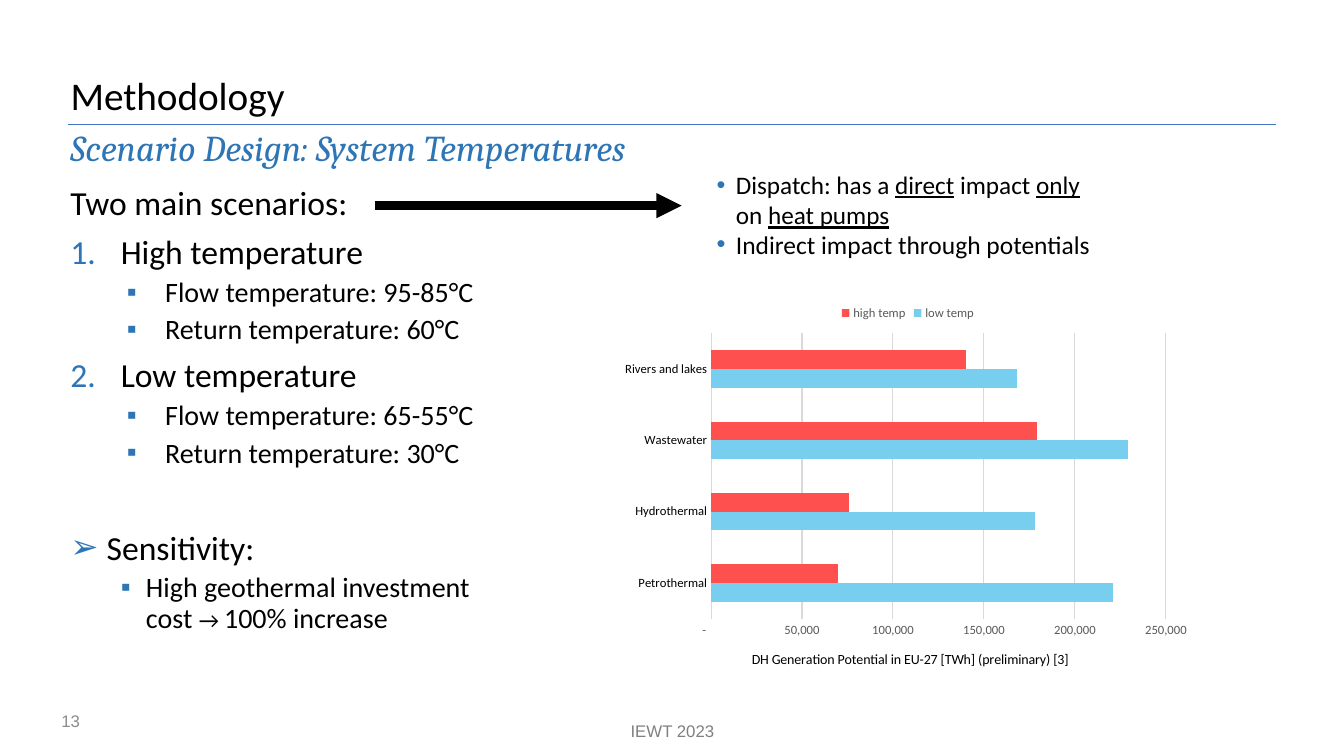
from lxml import etree
from pptx import Presentation
from pptx.chart.data import CategoryChartData
from pptx.dml.color import RGBColor
from pptx.enum import chart as ch, shapes, text
from pptx.oxml import ns, parse_xml
from pptx.util import Inches, Pt

BLUE, BLACK, GRID, GREY = "2E75B6", "000000", "D9D9D9", "595959"
MAIN = dict(size=24, before=6)
FREE = dict(MAIN, left=0.36, hang=0.36, bullet="➢", before=41)
SUB = dict(size=20, before=5, spacing=0.9, left=0.94, hang=0.38, bullet="▪", level=1)
NOTE = dict(size=18, before=6, left=0.19, hang=0.19, bullet="•")


def numbered(n):
    return dict(MAIN, left=0.5, hang=0.5, number=n)


TITLE = [(["Methodology"], dict(size=28, spacing=0.8))]
SUBTITLE = [(["Scenario Design: System Temperatures"],
             dict(size=26, spacing=0.9, font="Cambria", color=BLUE, italic=True))]
SCENARIOS = [
    (["Two main scenarios:"], MAIN),
    (["High temperature"], numbered(1)),
    (["Flow temperature: 95-85°C"], SUB),
    (["Return temperature: 60°C"], SUB),
    (["Low temperature"], numbered(2)),
    (["Flow temperature: 65-55°C"], SUB),
    (["Return temperature: 30°C"], SUB),
    (["Sensitivity:"], FREE),
    (["High geothermal investment cost ", ("→ ", dict(size=16)), "100% increase"],
     dict(SUB, left=0.75, hang=0.25)),
]
UNDER = dict(underline=True)
DISPATCH = [(["Dispatch: has a ", ("direct", UNDER), " impact ", ("only", UNDER),
              " on ", ("heat pumps", UNDER)], NOTE)]
INDIRECT = [(["Indirect impact through potentials"], dict(NOTE, size=18.2, spacing=0.8))]
PAGE = [(["13"], dict(size=12, font="Arial", color="8C8C8C"))]
FOOTER = [(["IEWT 2023"], dict(size=12, font="Arial", color="808080",
                               align=text.PP_ALIGN.CENTER))]
TEXTS = [
    (SUBTITLE, (0.6, 1.24, 12.32, 0.5), text.MSO_ANCHOR.TOP),
    (SCENARIOS, (0.6, 1.76, 4.3, 4.99), text.MSO_ANCHOR.TOP),
    (DISPATCH, (7.01, 1.63, 3.99, 0.53), text.MSO_ANCHOR.TOP),
    (INDIRECT, (7.01, 2.28, 3.99, 0.53), text.MSO_ANCHOR.TOP),
    (PAGE, (0.51, 6.95, 3, 0.4), text.MSO_ANCHOR.MIDDLE),
    (FOOTER, (4.42, 7.05, 4.5, 0.4), text.MSO_ANCHOR.MIDDLE),
]
LINES = [
    ((0.67, 1.23, 12.66, 1.23), "4472C4", 0.5, False),
    ((3.72, 2.04, 6.76, 2.04), BLACK, 6, True),
]
SOURCES = ["Petrothermal", "Hydrothermal", "Wastewater", "Rivers and lakes"]
POTENTIALS = [
    ("low temp", "77CEEF", (221000, 178000, 229000, 168000)),
    ("high temp", "FF5050", (70000, 76000, 179000, 140000)),
]
AXIS_TITLE = "DH Generation Potential in EU-27 [TWh] (preliminary) [3]"
NUMBERS = '_-* #,##0_-;\\-* #,##0_-;_-* "-"??_-;_-@_'


def rgb(value):
    return RGBColor.from_string(value)


def style(font, size, color=BLACK, name="Calibri"):
    font.size, font.name, font.bold = Pt(size), name, False
    font.color.rgb = rgb(color)


def add_bullet(p, look):
    pPr = p._p.get_or_add_pPr()
    pPr.set("marL", str(Inches(look["left"])))
    pPr.set("indent", str(-Inches(look["hang"])))
    color = etree.SubElement(pPr, ns.qn("a:buClr"))
    etree.SubElement(color, ns.qn("a:srgbClr"), val=BLUE)
    if "number" in look:
        etree.SubElement(pPr, ns.qn("a:buFont"), typeface="+mj-lt")
        etree.SubElement(pPr, ns.qn("a:buAutoNum"), type="arabicPeriod",
                         startAt=str(look["number"]))
    else:
        etree.SubElement(pPr, ns.qn("a:buFont"), typeface="Arial")
        etree.SubElement(pPr, ns.qn("a:buChar"), char=look["bullet"])


def fill_text(sp, box, paragraphs, anchor):
    sp.left, sp.top, sp.width, sp.height = map(Inches, box)
    tf = sp.text_frame
    tf.word_wrap, tf.auto_size, tf.vertical_anchor = True, text.MSO_AUTO_SIZE.NONE, anchor
    for i, (runs, look) in enumerate(paragraphs):
        p = tf.add_paragraph() if i else tf.paragraphs[0]
        p.level = look.get("level", 0)
        p.alignment = look.get("align", text.PP_ALIGN.LEFT)
        p.line_spacing = look.get("spacing", 1.0)
        p.space_before = Pt(look.get("before", 0) if i else 0)
        if "left" in look:
            add_bullet(p, look)
        for run in runs:
            words, extra = (run, {}) if isinstance(run, str) else run
            own = {**look, **extra}
            r = p.add_run()
            r.text = words
            style(r.font, own["size"], own.get("color", BLACK), own.get("font", "Calibri"))
            r.font.italic = own.get("italic")
            r.font.underline = own.get("underline")


def add_line(s, ends, color, width, arrow):
    line = s.shapes.add_connector(shapes.MSO_CONNECTOR.STRAIGHT, *map(Inches, ends))
    line.line.color.rgb = rgb(color)
    line.line.width = Pt(width)
    if arrow:
        etree.SubElement(line.line._get_or_add_ln(), ns.qn("a:tailEnd"), type="triangle")
    etree.SubElement(line._element.spPr, ns.qn("a:effectLst"))


def set_layout(parent, index, **values):
    for old in parent.findall(ns.qn("c:layout")):
        parent.remove(old)
    items = "".join(f'<c:{k} val="{v}"/>' for k, v in values.items())
    parent.insert(index, parse_xml(
        f'<c:layout {ns.nsdecls("c")}><c:manualLayout>{items}</c:manualLayout></c:layout>'))


def add_potentials(s):
    data = CategoryChartData()
    data.categories = SOURCES
    for name, _, values in POTENTIALS:
        data.add_series(name, values)
    chart = s.shapes.add_chart(ch.XL_CHART_TYPE.BAR_CLUSTERED,
                               *map(Inches, (6.09, 2.92, 5.83, 3.89)), data).chart
    style(chart.font, 10)
    chart.has_title = False
    chart.has_legend = True
    chart.legend.position = ch.XL_LEGEND_POSITION.TOP
    chart.legend.include_in_layout = False
    style(chart.legend.font, 9, GREY)

    plot = chart.plots[0]
    plot.gap_width, plot.overlap, plot.vary_by_categories = 182, 0, False
    for series, (_, color, _) in zip(plot.series, POTENTIALS):
        series.format.fill.solid()
        series.format.fill.fore_color.rgb = rgb(color)

    cat, val = chart.category_axis, chart.value_axis
    for axis, color in ((cat, BLACK), (val, GREY)):
        axis.major_tick_mark = axis.minor_tick_mark = ch.XL_TICK_MARK.NONE
        style(axis.tick_labels.font, 9, color)
    cat.has_major_gridlines = False
    val.has_major_gridlines = True
    for line in (cat.format.line, val.major_gridlines.format.line):
        line.color.rgb = rgb(GRID)
        line.width = Pt(0.75)
    val.format.line.fill.background()
    val.minimum_scale, val.maximum_scale, val.major_unit = 0, 250000, 50000
    val.tick_labels.number_format = NUMBERS
    val.tick_labels.number_format_is_linked = False
    r = val.axis_title.text_frame.paragraphs[0].add_run()
    r.text = AXIS_TITLE
    style(r.font, 10)

    set_layout(chart._chartSpace.chart.plotArea, 0, layoutTarget="inner",
               xMode="edge", yMode="edge", x=0.165, y=0.1, w=0.774, h=0.727)
    set_layout(val.axis_title._element, 1, xMode="edge", yMode="edge", x=0.23, y=0.9)


def main():
    prs = Presentation()
    prs.slide_width, prs.slide_height = Inches(13.33), Inches(7.5)
    s = prs.slides.add_slide(prs.slide_layouts[5])
    fill_text(s.shapes.title, (0.6, 0.75, 12.32, 0.5), TITLE, text.MSO_ANCHOR.TOP)
    for paragraphs, box, anchor in TEXTS:
        fill_text(s.shapes.add_textbox(0, 0, 0, 0), box, paragraphs, anchor)
    for line in LINES:
        add_line(s, *line)
    add_potentials(s)
    prs.save("out.pptx")


if __name__ == "__main__":
    main()
